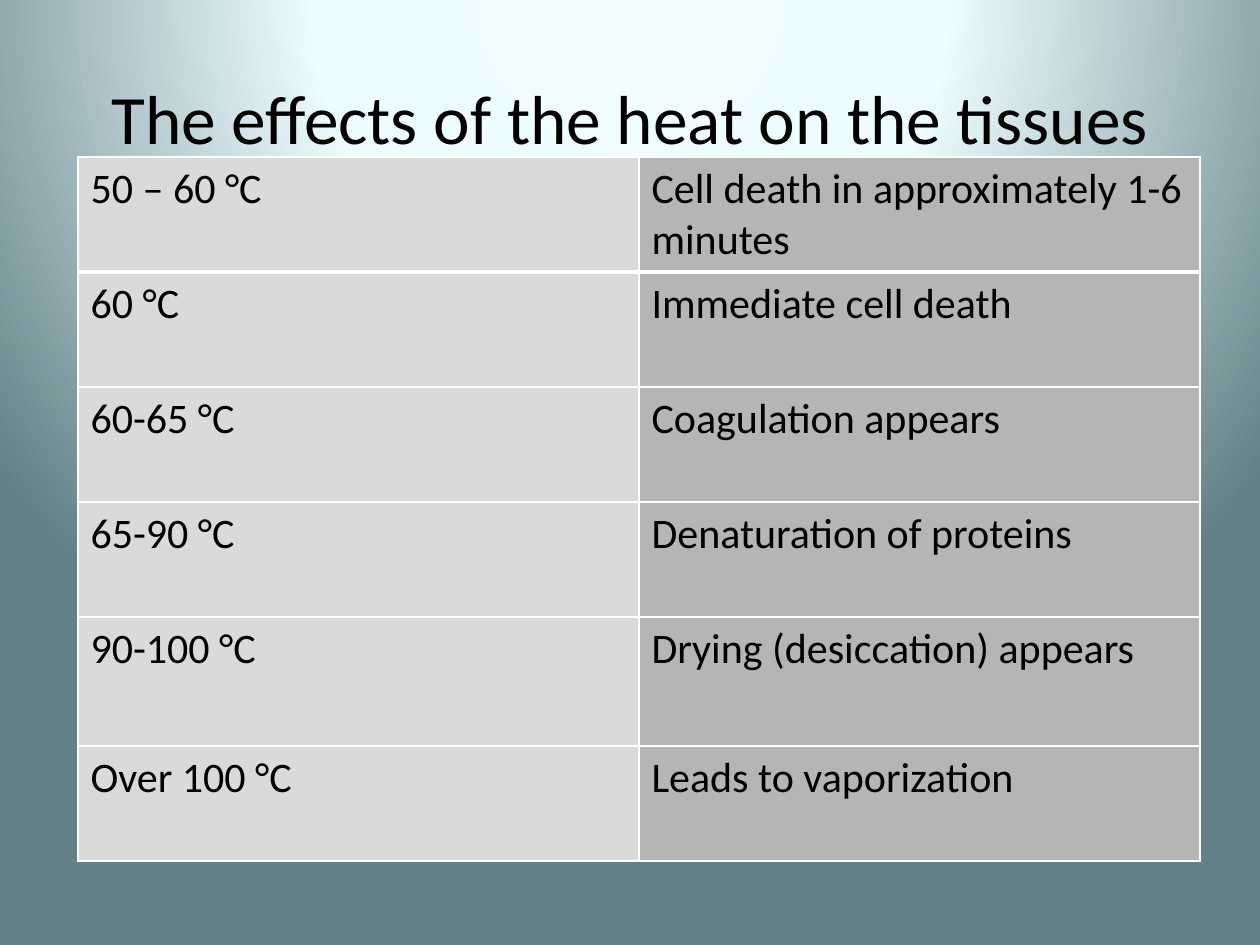
"""Build a slide with a table of the effects of heat on tissues."""
import lxml.etree
import pptx
import pptx.dml.color
import pptx.enum.text
import pptx.oxml.ns
import pptx.util

TITLE = "The effects of the heat on the tissues"
EFFECTS = [
    ("50 – 60 °C", "Cell death in approximately 1-6 minutes"),
    ("60 °C", "Immediate cell death"),
    ("60-65 °C", "Coagulation appears"),
    ("65-90 °C", "Denaturation of proteins"),
    ("90-100 °C", "Drying (desiccation) appears"),
    ("Over 100 °C", "Leads to vaporization"),
]
ROW_HEIGHTS = [115, 115, 115, 115, 129, 115]
COLUMN_WIDTH = 561
TABLE_LEFT, TABLE_TOP = 78, 157
TITLE_BOX = (63, 38, 1134, 157)
SLIDE_SIZE = (1260, 945)

FONT = "Calibri"
BLACK = pptx.dml.color.RGBColor(0x00, 0x00, 0x00)
WHITE = pptx.dml.color.RGBColor(0xFF, 0xFF, 0xFF)
COLUMN_FILLS = [
    pptx.dml.color.RGBColor(0xDA, 0xDA, 0xDA),
    pptx.dml.color.RGBColor(0xB5, 0xB5, 0xB5),
]
BACKDROP_STOPS = [
    (0, pptx.dml.color.RGBColor(0xF1, 0xFC, 0xFF)),
    (40, pptx.dml.color.RGBColor(0xEC, 0xFC, 0xFF)),
    (100, pptx.dml.color.RGBColor(0x63, 0x81, 0x87)),
]
BACKDROP_FOCUS = {"l": 50, "t": -80, "r": 50, "b": 180}


def px(length):
    return pptx.util.Emu(length * 914400 // 126)


def add_node(parent, tag, **attributes):
    node = lxml.etree.SubElement(parent, pptx.oxml.ns.qn(tag))
    for name, value in attributes.items():
        node.set(name, str(value))
    return node


def paint_backdrop(slide):
    slide.background.fill.gradient()
    gradient = slide.element.find(".//" + pptx.oxml.ns.qn("a:gradFill"))
    for child in list(gradient):
        gradient.remove(child)
    stops = add_node(gradient, "a:gsLst")
    for percent, color in BACKDROP_STOPS:
        stop = add_node(stops, "a:gs", pos=percent * 1000)
        add_node(stop, "a:srgbClr", val=color)
    circle = add_node(gradient, "a:path", path="circle")
    focus = {side: percent * 1000 for side, percent in BACKDROP_FOCUS.items()}
    add_node(circle, "a:fillToRect", **focus)


def format_text(frame, size):
    for run in frame.paragraphs[0].runs:
        run.font.name = FONT
        run.font.size = pptx.util.Pt(size)
        run.font.color.rgb = BLACK


def draw_borders(cell, row):
    widths = {"L": 1, "R": 1, "T": 3 if row == 1 else 1, "B": 3 if row == 0 else 1}
    properties = cell._tc.get_or_add_tcPr()
    for side, width in widths.items():
        line = add_node(properties, "a:ln" + side, w=pptx.util.Pt(width))
        add_node(add_node(line, "a:solidFill"), "a:srgbClr", val=WHITE)


def add_title(slide):
    title = slide.shapes.title
    title.left, title.top, title.width, title.height = map(px, TITLE_BOX)
    frame = title.text_frame
    frame.text = TITLE
    frame.vertical_anchor = pptx.enum.text.MSO_ANCHOR.MIDDLE
    frame.paragraphs[0].alignment = pptx.enum.text.PP_ALIGN.CENTER
    format_text(frame, 39.6)


def add_effects(slide):
    columns = len(COLUMN_FILLS)
    effects = slide.shapes.add_table(
        len(EFFECTS), columns, px(TABLE_LEFT), px(TABLE_TOP),
        px(COLUMN_WIDTH * columns), px(sum(ROW_HEIGHTS))).table
    effects.first_row = effects.horz_banding = False
    for column in effects.columns:
        column.width = px(COLUMN_WIDTH)
    for row, (texts, height) in enumerate(zip(EFFECTS, ROW_HEIGHTS)):
        effects.rows[row].height = px(height)
        for column, (text, color) in enumerate(zip(texts, COLUMN_FILLS)):
            cell = effects.cell(row, column)
            cell.text_frame.text = text
            format_text(cell.text_frame, 24)
            draw_borders(cell, row)
            cell.fill.solid()
            cell.fill.fore_color.rgb = color


def main():
    deck = pptx.Presentation()
    deck.slide_width, deck.slide_height = map(px, SLIDE_SIZE)
    slide = deck.slides.add_slide(deck.slide_layouts[5])
    paint_backdrop(slide)
    add_title(slide)
    add_effects(slide)
    deck.save("out.pptx")


if __name__ == "__main__":
    main()
